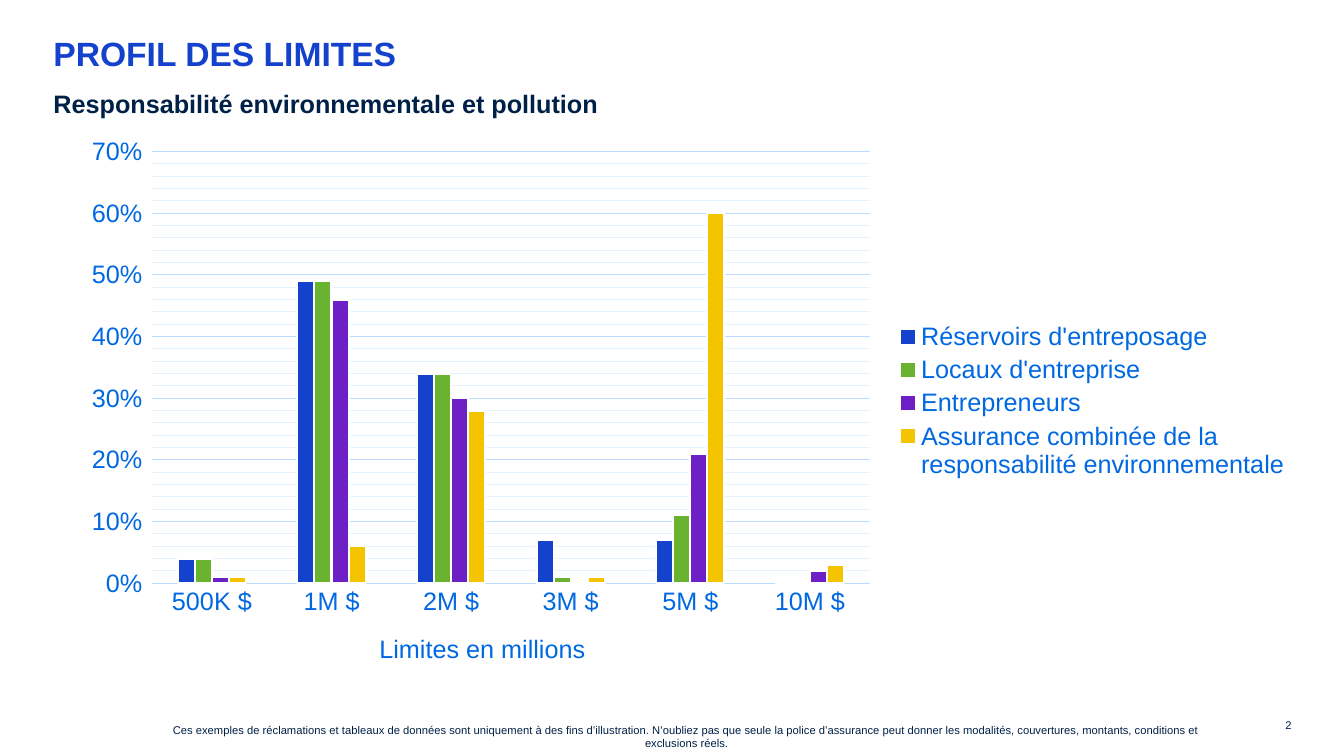
from copy import deepcopy

from lxml import etree
from pptx import Presentation
from pptx.chart.data import CategoryChartData
from pptx.dml.color import RGBColor
from pptx.enum.chart import XL_CHART_TYPE, XL_LEGEND_POSITION, XL_TICK_MARK
from pptx.enum.text import MSO_ANCHOR, MSO_AUTO_SIZE, PP_ALIGN
from pptx.oxml.ns import qn
from pptx.util import Inches, Pt

COLUMN = XL_CHART_TYPE.COLUMN_CLUSTERED
RIGHT_KEY = XL_LEGEND_POSITION.RIGHT
NO_TICK, OUT_TICK = XL_TICK_MARK.NONE, XL_TICK_MARK.OUTSIDE
TOP, BOTTOM = MSO_ANCHOR.TOP, MSO_ANCHOR.BOTTOM
FIXED, GROW = MSO_AUTO_SIZE.NONE, MSO_AUTO_SIZE.SHAPE_TO_FIT_TEXT
LEFT, CENTER, RIGHT = PP_ALIGN.LEFT, PP_ALIGN.CENTER, PP_ALIGN.RIGHT

WHITE = RGBColor(0xFF, 0xFF, 0xFF)
NAVY = RGBColor(0x00, 0x21, 0x47)
BLUE = RGBColor(0x14, 0x42, 0xCC)
AZURE = RGBColor(0x00, 0x68, 0xE1)
GREEN = RGBColor(0x69, 0xB3, 0x31)
PURPLE = RGBColor(0x6E, 0x20, 0xC7)
GOLD = RGBColor(0xF5, 0xC4, 0x00)
GRID = RGBColor(0xBD, 0xDC, 0xFF)
PALE = RGBColor(0xE5, 0xF1, 0xFF)

LIMITS = ["500K $", "1M $", "2M $", "3M $", "5M $", "10M $"]
SERIES = [
    ("Réservoirs d'entreposage", BLUE, (0.04, 0.49, 0.34, 0.07, 0.07, 0)),
    ("Locaux d'entreprise", GREEN, (0.04, 0.49, 0.34, 0.01, 0.11, 0)),
    ("Entrepreneurs", PURPLE, (0.01, 0.46, 0.3, 0, 0.21, 0.02)),
    ("Assurance combinée de la responsabilité environnementale", GOLD,
     (0.01, 0.06, 0.28, 0.01, 0.6, 0.03)),
]
NOTICE = (
    "Ces exemples de réclamations et tableaux de données sont uniquement à des "
    "fins d’illustration. N’oubliez pas que seule la police d’assurance peut "
    "donner les modalités, couvertures, montants, conditions et exclusions réels."
)


def put(item, **style):
    """Set each given attribute on an item."""
    for name, value in style.items():
        setattr(item, name, value)


def ink(font, size, color, bold=False):
    """Format a font in Arial."""
    put(font, name="Arial", size=Pt(size), bold=bold)
    font.color.rgb = color


def rule(line, color, width=0.75):
    """Colour a line and set its width."""
    line.color.rgb = color
    line.width = Pt(width)


def write(shape, box, text, size, color, bold=False, anchor=TOP, fit=FIXED, **style):
    """Fill a text shape with one paragraph and place it in its box."""
    frame = shape.text_frame
    put(frame, text=text, word_wrap=True, auto_size=fit, vertical_anchor=anchor,
        margin_left=0, margin_top=0, margin_right=0, margin_bottom=0)
    para = frame.paragraphs[0]
    put(para, space_before=Pt(0), **style)
    ink(para.runs[0].font, size, color, bold)
    left, top, width, height = map(Inches, box)
    put(shape, left=left, top=top, width=width, height=height)


def pin(node, index, inner=False, **sizes):
    """Give a chart part a manual layout in fractions of the chart."""
    for old in node.findall(qn("c:layout")):
        node.remove(old)
    layout = etree.Element(qn("c:layout"))
    manual = etree.SubElement(layout, qn("c:manualLayout"))
    marks = {"layoutTarget": "inner"} if inner else {}
    marks.update(xMode="edge", yMode="edge", **sizes)
    for name, value in marks.items():
        etree.SubElement(manual, qn("c:" + name)).set("val", str(value))
    node.insert(index, layout)


def heads(slide, box):
    """Place the title and the subtitle line in the box."""
    left, top, width, height = box
    write(slide.shapes.title, (left, top, width, 0.49), "PROFIL DES LIMITES",
          24, BLUE, True, alignment=LEFT, line_spacing=0.8)
    write(slide.placeholders[1], (left, top + 0.48, width, height - 0.48),
          "Responsabilité environnementale et pollution", 18, NAVY, True,
          alignment=LEFT, space_after=Pt(6))


def grids(scale):
    """Colour the major grid lines and give the minor ones a paler tint."""
    rule(scale.major_gridlines.format.line, GRID)
    major, minor = (scale._element.find(qn(f"c:{kind}Gridlines"))
                    for kind in ("major", "minor"))
    minor.append(deepcopy(major.find(qn("c:spPr"))))
    for tint in minor.iter(qn("a:srgbClr")):
        tint.set("val", str(PALE))


def axes(chart):
    """Format both axes and their grid lines."""
    base, scale = chart.category_axis, chart.value_axis
    put(base, major_tick_mark=NO_TICK, minor_tick_mark=NO_TICK)
    rule(base.format.line, GRID)
    base.axis_title.text_frame.text = "Limites en millions"
    label = base.axis_title.text_frame.paragraphs[0].runs[0]
    ink(label.font, 18, AZURE)
    pin(base.axis_title._element, 1, x=0.25, y=0.91)
    put(scale, minimum_scale=0, maximum_scale=0.7, major_unit=0.1, minor_unit=0.02,
        has_major_gridlines=True, has_minor_gridlines=True,
        major_tick_mark=OUT_TICK, minor_tick_mark=NO_TICK)
    scale.format.line.fill.background()
    grids(scale)
    put(scale.tick_labels, number_format="0%", number_format_is_linked=False)
    for axis in (base, scale):
        ink(axis.tick_labels.font, 18, AZURE)


def bars(slide, box):
    """Draw the column chart with its legend in the box."""
    data = CategoryChartData(number_format="0%")
    data.categories = LIMITS
    for name, _, values in SERIES:
        data.add_series(name, values)
    chart = slide.shapes.add_chart(COLUMN, *map(Inches, box), data).chart
    put(chart, has_title=False, has_legend=True)
    ink(chart.font, 18, NAVY)
    plot = chart.plots[0]
    put(plot, gap_width=300, overlap=0, vary_by_categories=False)
    for series, (_, color, _) in zip(plot.series, SERIES):
        series.invert_if_negative = False
        series.format.fill.solid()
        series.format.fill.fore_color.rgb = color
        rule(series.format.line, WHITE, 1.5)
    axes(chart)
    put(chart.legend, position=RIGHT_KEY, include_in_layout=False)
    ink(chart.legend.font, 18, AZURE)
    pin(chart.legend._element, 1, x=0.67, y=0.35, w=0.32, h=0.3)
    pin(plot._element.getparent(), 0, True, x=0.07, y=0.05, w=0.58, h=0.78)


def foot(slide, box):
    """Place the notice and the page number in the box."""
    left, top, width, height = box
    shapes = slide.shapes
    write(shapes.add_textbox(0, 0, 0, 0), (left, top + 0.1, 10.34, height - 0.1),
          NOTICE, 8, NAVY, anchor=BOTTOM, alignment=CENTER, space_after=Pt(6))
    write(shapes.add_textbox(0, 0, 0, 0), (left + width - 0.31, top, 0.31, 0.13),
          "2", 8, NAVY, fit=GROW, alignment=RIGHT)


def main():
    """Build the slide and save it."""
    deck = Presentation()
    put(deck, slide_width=Inches(13.33), slide_height=Inches(7.5))
    slide = deck.slides.add_slide(deck.slide_layouts[2])
    heads(slide, (0.53, 0.4, 12.27, 0.83))
    bars(slide, (0.65, 1.23, 12.27, 5.49))
    foot(slide, (1.64, 7.13, 11.17, 0.31))
    deck.save("out.pptx")


if __name__ == "__main__":
    main()
